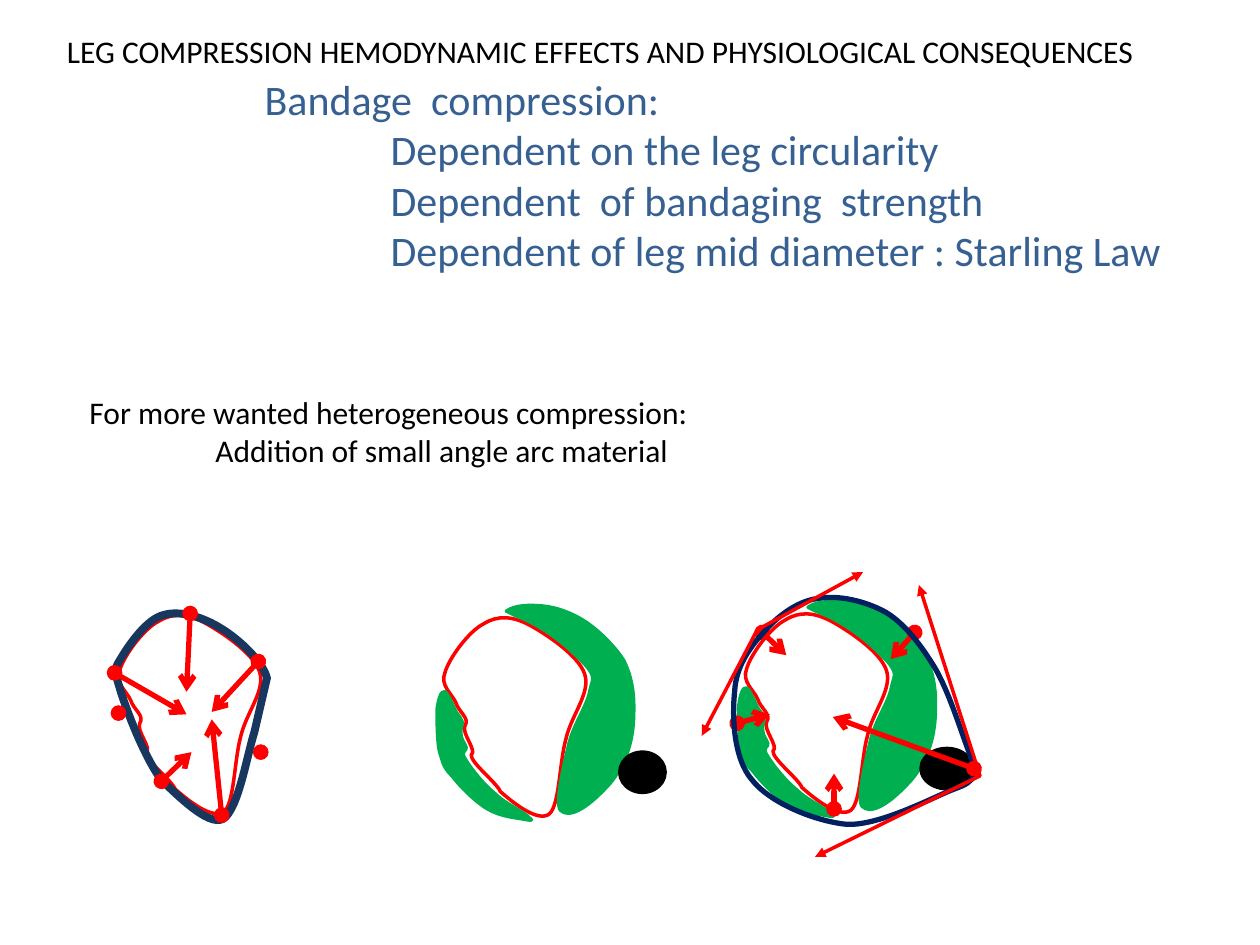
from lxml import etree
from pptx import Presentation
from pptx.dml.color import RGBColor
from pptx.enum.shapes import MSO_CONNECTOR, MSO_SHAPE
from pptx.enum.text import MSO_ANCHOR, MSO_AUTO_SIZE, PP_ALIGN
from pptx.oxml.ns import qn
from pptx.util import Pt

STRAIGHT, ELLIPSE = MSO_CONNECTOR.STRAIGHT, MSO_SHAPE.OVAL
TOP, LEFT, NO_FIT = MSO_ANCHOR.TOP, PP_ALIGN.LEFT, MSO_AUTO_SIZE.NONE
FONT = "Calibri"
BLACK, WHITE, RED, GREEN = "000000", "FFFFFF", "FF0000", "00B050"
BLUE, STEEL, NAVY = "376092", "17375E", "002060"
FINE = 100  # outline units per point

# Texts: (indent, wording)
TITLE = [(0, "LEG COMPRESSION HEMODYNAMIC EFFECTS AND PHYSIOLOGICAL CONSEQUENCES")]
FACTORS = [
    (72, "Bandage  compression:"),
    (144, "Dependent on the leg circularity"),
    (144, "Dependent  of bandaging  strength"),
    (144, "Dependent of leg mid diameter : Starling Law"),
]
NOTE = [
    (0, "For more wanted heterogeneous compression:"),
    (72, "Addition of small angle arc material"),
]

# Curved outlines: a start point, then two control points and an end per curve
SKIN = [
    (254.2, 384.5), (256.3, 376.6), (267.8, 360.7), (276.5, 356.4),
    (284.4, 351.4), (293, 352.1), (302.4, 357.1),
    (311.8, 362.2), (330.5, 374.4), (334.1, 385.2),
    (337.7, 396), (326.2, 409), (323.3, 422.6),
    (319.7, 435.6), (319.7, 460.1), (313.9, 465.1),
    (307.4, 470.2), (293, 458.6), (285.8, 452.2),
    (284.4, 447.8), (268.6, 435.6), (269.3, 431.3),
    (272.9, 429.1), (263.5, 419), (265.7, 414.7),
    (268.6, 410.4), (262.1, 406.8), (260.6, 401.8),
    (258.5, 396.7), (251.3, 391.7), (254.2, 384.5),
]
LARGE_PAD = [
    (293.8, 351.4), (314.6, 359.3), (326.9, 372.2), (334.1, 379.4),
    (341.3, 387.4), (338.4, 388.1), (337, 395.3),
    (335.5, 403.2), (328.3, 413.3), (325.4, 424.1),
    (322.6, 435.6), (316.8, 459.4), (320.4, 463),
    (324.7, 467.3), (334.1, 463.7), (348.5, 447.8),
    (362.2, 431.3), (362.2, 413.3), (362.2, 403.9),
    (362.2, 394.6), (360.7, 385.9), (356.4, 377.3),
    (351.4, 369.4), (342, 360), (334.1, 355),
    (326.2, 349.9), (317.5, 347), (310.3, 346.3),
    (303.1, 345.6), (294.5, 345.6), (289.4, 349.2),
]
SMALL_PAD = [
    (254.2, 395.3), (255.6, 395.3), (259.2, 403.9), (260.6, 406.8),
    (262.8, 409.7), (263.5, 410.4), (264.2, 412.6),
    (264.2, 414.7), (262.8, 417.6), (263.5, 419.8),
    (263.5, 422.6), (265.7, 424.8), (266.4, 427),
    (267.1, 429.1), (262.8, 429.1), (265.7, 433.4),
    (268.6, 438.5), (276.5, 448.6), (283, 453.6),
    (288.7, 459.4), (300.2, 464.4), (302.4, 467.3),
    (305.3, 469.4), (303.1, 468.7), (298.8, 468),
    (295.2, 467.3), (285.8, 466.6), (278.6, 462.2),
    (272.2, 458.6), (262.8, 449.3), (258.5, 443.5),
    (253.4, 438.5), (253.4, 436.3), (251.3, 429.8),
    (249.8, 424.1), (249.8, 411.1), (249.8, 405.4),
    (250.6, 399.6), (252, 394.6), (254.2, 395.3),
]
TIGHT_BANDAGE = [
    (69.8, 375.1), (74.2, 367.9), (84.2, 353.5), (93.6, 351.4),
    (103, 348.5), (116.6, 352.8), (126.7, 359.3),
    (136.1, 365), (149.8, 377.3), (152.6, 387.4),
    (152.6, 387.4), (145.4, 418.3), (145.4, 418.3),
    (141.1, 432), (136.1, 463), (127.4, 468),
    (118.8, 472.3), (100.8, 453.6), (92.9, 446.4),
    (83.5, 434.9), (72, 405.4), (68.4, 393.1),
    (64.8, 381.6), (65.5, 382.3), (69.8, 375.1),
]
PADDED_BANDAGE = [
    (534.2, 381.6), (526.3, 368.6), (517, 356.4), (506.2, 349.9),
    (494.6, 343.4), (478.8, 339.8), (467.3, 342),
    (455.8, 343.4), (444.2, 352.1), (436.3, 361.4),
    (428.4, 370.1), (420.5, 380.9), (419.8, 395.3),
    (418.3, 409), (419, 433.4), (429.8, 445.7),
    (439.9, 458.6), (464.4, 468.7), (482.4, 470.9),
    (501.1, 473), (534.2, 455), (545.8, 450.7),
    (558, 446.4), (558.7, 442.8), (553.7, 429.8),
    (548.6, 416.2), (542.2, 395.3), (534.2, 381.6),
]

# Legs: shift of the outlines, and the black ball (left, top, width, height)
PADDED_LEGS = [
    ((172.4, -2.2), (526.3, 427.7, 29.5, 23)),
    ((0, 0), (354.2, 429.8, 25.9, 23)),
]
BARE_LEG_SHIFT = (-185.8, -1.4)

# Pressure arrows and dots: x1, y1, x2, y2
DOTS = [(67.7, 407.5, 68.4, 407.5), (149, 429.8, 149.8, 429.8)]
PRESSURES = [
    (147.6, 378, 121, 406.8), (92.2, 446.4, 109.4, 429.8),
    (65.5, 384.5, 106.6, 408.2), (108.7, 350.6, 106.6, 395.3),
    (126.7, 465.8, 121, 411.1), (476.6, 462.2, 476.6, 442.1),
    (421.2, 413.3, 439.9, 408.2), (435.6, 361.4, 449.3, 374.4),
    (522.7, 361.4, 509, 376.6),
]
BALL_PRESSURE = (556.6, 439.2, 475.9, 409.7)
TANGENTS = [
    [(493.2, 326.9), (432.7, 360), (401, 420.5)],
    [(465.7, 489.7), (560, 443.4), (525.1, 334.3)],
]


def color(value):
    return RGBColor.from_string(value)


def write(box, place, lines, size, ink):
    box.left, box.top, box.width, box.height = map(Pt, place)
    frame = box.text_frame
    frame.word_wrap, frame.auto_size, frame.vertical_anchor = True, NO_FIT, TOP
    frame.text = "\n".join(words for _, words in lines)
    for para, (indent, _) in zip(frame.paragraphs, lines):
        para.alignment, para.space_before = LEFT, Pt(0)
        for span in para.runs:
            span.font.size, span.font.name = Pt(size), FONT
            span.font.color.rgb = color(ink)
        properties = para._p.get_or_add_pPr()
        properties.set("marL", str(Pt(indent)))
        properties.set("indent", "0")
        properties.find(qn("a:spcBef")).addnext(etree.Element(qn("a:buNone")))


def paint(shape, line, width, fill=None):
    shape.shadow.inherit = False
    shape.line.color.rgb, shape.line.width = color(line), Pt(width)
    if fill:
        shape.fill.solid()
        shape.fill.fore_color.rgb = color(fill)
    else:
        shape.fill.background()


def add_ends(shape, head, tail=None):
    line = shape.line._get_or_add_ln()
    for tag, kind in (("a:headEnd", head), ("a:tailEnd", tail)):
        if kind:
            etree.SubElement(line, qn(tag), type=kind)


def add_outline(points, line, width, fill=None, shift=(0, 0), curved=True):
    moved = [(round((x + shift[0]) * FINE), round((y + shift[1]) * FINE)) for x, y in points]
    corners = moved[::3] if curved else moved
    builder = page.shapes.build_freeform(*corners[0], scale=Pt(1) / FINE)
    builder.add_line_segments(corners[1:], close=curved)
    shape = builder.convert_to_shape()
    if curved:
        bend(shape, moved, corners)
    paint(shape, line, width, fill)
    return shape


def bend(shape, points, corners):
    """Turn each straight segment into a curve with its two control points."""
    left, top = (min(values) for values in zip(*corners))
    segments = list(shape._element.iter(qn("a:lnTo")))
    for i, segment in enumerate(segments[:len(corners) - 1]):
        curve = etree.Element(qn("a:cubicBezTo"))
        for x, y in points[3 * i + 1:3 * i + 4]:
            etree.SubElement(curve, qn("a:pt"), x=str(x - left), y=str(y - top))
        segment.getparent().replace(segment, curve)


def add_pressure(ends, tail=None):
    arrow = page.shapes.add_connector(STRAIGHT, *map(Pt, ends))
    arrow.line.color.rgb, arrow.line.width = color(RED), Pt(3)
    add_ends(arrow, "oval", tail)
    etree.SubElement(arrow._element.spPr, qn("a:effectLst"))


deck = Presentation()
deck.slide_width, deck.slide_height = Pt(720), Pt(540)
page = deck.slides.add_slide(deck.slide_layouts[1])

# Texts
write(page.shapes.title, (31, 14.6, 666, 29), TITLE, 18, BLACK)
write(page.placeholders[1], (72, 38.3, 600, 152.6), FACTORS, 24, BLUE)
write(page.shapes.add_textbox(0, 0, 0, 0), (44, 221, 630, 51), NOTE, 18, BLACK)

# Legs with padding and ball
for shift, ball in PADDED_LEGS:
    add_outline(SKIN, RED, 2, WHITE, shift)
    for pad in (LARGE_PAD, SMALL_PAD):
        add_outline(pad, GREEN, 2, GREEN, shift)
    paint(page.shapes.add_shape(ELLIPSE, *map(Pt, ball)), BLACK, 2, BLACK)

# Bare leg, bandages and pressures
add_outline(SKIN, RED, 2, WHITE, BARE_LEG_SHIFT)
add_outline(TIGHT_BANDAGE, STEEL, 4.5)
for dot in DOTS:
    add_pressure(dot)
for pressure in PRESSURES:
    add_pressure(pressure, "arrow")
add_outline(PADDED_BANDAGE, NAVY, 3)
add_pressure(BALL_PRESSURE, "arrow")
for tangent in TANGENTS:
    add_ends(add_outline(tangent, RED, 2, curved=False), "triangle", "triangle")

deck.save("out.pptx")
